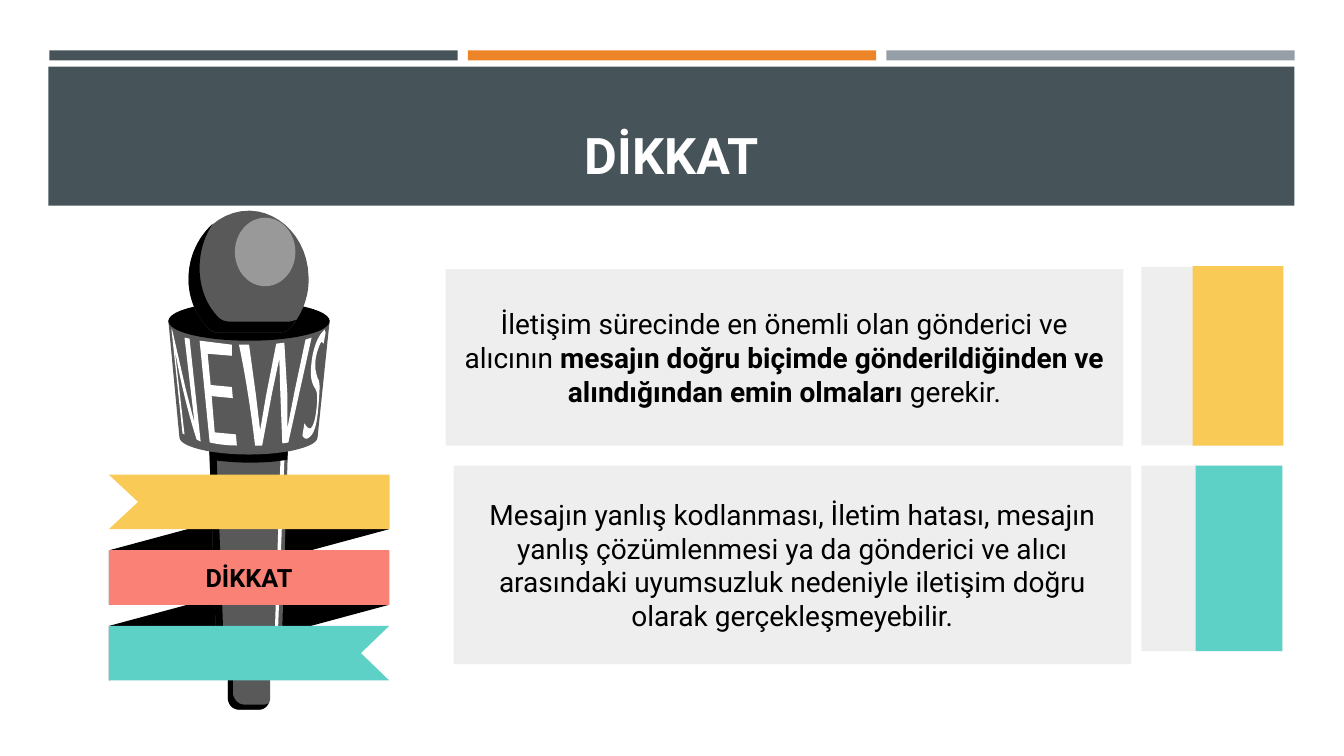
from typing import NamedTuple

from pptx import Presentation
from pptx.dml.color import RGBColor
from pptx.enum.shapes import MSO_SHAPE
from pptx.enum.text import MSO_ANCHOR, MSO_AUTO_SIZE, PP_ALIGN
from pptx.util import Inches, Pt

SLATE = RGBColor(0x46, 0x53, 0x59)
ORANGE = RGBColor(0xED, 0x84, 0x28)
SILVER = RGBColor(0x96, 0x9F, 0xA7)
PALE = RGBColor(0xEE, 0xEE, 0xEE)
YELLOW = RGBColor(0xF9, 0xCA, 0x55)
CORAL = RGBColor(0xFA, 0x81, 0x75)
TEAL = RGBColor(0x5E, 0xD1, 0xC6)
BLACK = RGBColor(0x00, 0x00, 0x00)
WHITE = RGBColor(0xFF, 0xFF, 0xFF)
GREY = RGBColor(0x59, 0x59, 0x59)
SHINE = RGBColor(0x99, 0x99, 0x99)
FONT = "Roboto"
CURVE_STEPS = 12


class Block(NamedTuple):
    left: float
    top: float
    width: float
    height: float
    color: RGBColor


class Span(NamedTuple):
    text: str
    bold: bool = False


class Outline(NamedTuple):
    """Each step is a corner (x, y) or a cubic curve (two controls, then its end)."""
    color: RGBColor
    start: tuple
    steps: list


def paint(shape, color: RGBColor) -> None:
    shape.shadow.inherit = False
    shape.fill.solid()
    shape.fill.fore_color.rgb = color
    shape.line.fill.background()


def draw_block(shapes, block: Block, kind=MSO_SHAPE.RECTANGLE):
    shape = shapes.add_shape(kind, *(Inches(length) for length in block[:4]))
    paint(shape, block.color)
    return shape


def curve_points(start: tuple, curve: tuple) -> list:
    x1, y1, x2, y2, x3, y3 = curve
    points = []
    for step in range(1, CURVE_STEPS + 1):
        t = step / CURVE_STEPS
        weights = ((1 - t) ** 3, 3 * t * (1 - t) ** 2, 3 * t * t * (1 - t), t ** 3)
        points.append(tuple(sum(w * v for w, v in zip(weights, values))
                            for values in ((start[0], x1, x2, x3), (start[1], y1, y2, y3))))
    return points


def draw_outline(shapes, outline: Outline):
    points = [outline.start]
    for step in outline.steps:
        points += [step] if len(step) == 2 else curve_points(points[-1], step)
    corners = [(Inches(x), Inches(y)) for x, y in points]
    builder = shapes.build_freeform(*corners[0])
    builder.add_line_segments(corners[1:], close=True)
    shape = builder.convert_to_shape()
    paint(shape, outline.color)
    return shape


def write(shape, spans: list[Span], size: int, color: RGBColor, anchor, side: float = 0.1, edge: float = 0.1) -> None:
    frame = shape.text_frame
    frame.word_wrap = True
    frame.auto_size = MSO_AUTO_SIZE.NONE
    frame.vertical_anchor = anchor
    frame.margin_left = frame.margin_right = Inches(side)
    frame.margin_top = frame.margin_bottom = Inches(edge)
    para = frame.paragraphs[0]
    para.alignment = PP_ALIGN.CENTER
    for span in spans:
        run = para.add_run()
        run.text = span.text
        run.font.name = FONT
        run.font.size = Pt(size)
        run.font.bold = span.bold
        run.font.color.rgb = color


# Ribbon: three bands of equal height, joined by two dark folds
LEFT, RIGHT, BAND, PITCH = 1.08, 3.86, 0.54, 0.75
TOPS = [4.71 + PITCH * index for index in range(3)]
FOLDS = [Outline(BLACK, (RIGHT, top), [(LEFT, top + PITCH), (LEFT, top + PITCH + BAND), (RIGHT, top + BAND)])
         for top in TOPS[:2]]
YELLOW_BAND, CORAL_BAND, TEAL_BAND = (
    Outline(color, (LEFT, top), [*left_notch, (LEFT, top + BAND), (RIGHT, top + BAND), *right_notch, (RIGHT, top)])
    for color, top, left_notch, right_notch in (
        (YELLOW, TOPS[0], [(1.37, TOPS[0] + BAND / 2)], []),
        (CORAL, TOPS[1], [], []),
        (TEAL, TOPS[2], [], [(3.58, TOPS[2] + BAND / 2)])))

# Microphone, from the handle up
HANDLE = [
    Outline(GREY, (2.26, 4.83), [(2.26, 6.92), (2.26, 6.99, 2.31, 7.04, 2.37, 7.04), (2.57, 7.04),
                                 (2.63, 7.04, 2.68, 6.99, 2.68, 6.92), (2.68, 4.83)]),
    Outline(BLACK, (2.26, 4.83), [(2.26, 6.92), (2.26, 6.99, 2.31, 7.04, 2.37, 7.04), (2.57, 7.04),
                                  (2.61, 7.04, 2.64, 7.02, 2.66, 6.98), (2.65, 6.98, 2.64, 6.99, 2.62, 6.99),
                                  (2.42, 6.99), (2.36, 6.99, 2.31, 6.93, 2.31, 6.87), (2.31, 4.83)]),
    Outline(GREY, (2.07, 4.31), [(2.15, 6.53), (2.15, 6.56, 2.29, 6.59, 2.47, 6.59),
                                 (2.65, 6.59, 2.79, 6.56, 2.79, 6.53), (2.86, 4.31)]),
    Outline(WHITE, (2.79, 4.31), [(2.72, 6.45), (2.75, 6.45), (2.83, 4.31)]),
    Outline(BLACK, (2.07, 4.31), [(2.08, 4.56), (2.15, 6.53), (2.15, 6.56, 2.29, 6.59, 2.47, 6.59),
                                  (2.64, 6.59, 2.79, 6.56, 2.79, 6.53), (2.79, 6.48),
                                  (2.73, 6.49, 2.64, 6.5, 2.54, 6.5), (2.36, 6.5, 2.22, 6.48, 2.22, 6.44),
                                  (2.15, 4.57), (2.25, 4.58, 2.35, 4.59, 2.47, 4.59),
                                  (2.63, 4.59, 2.75, 4.58, 2.85, 4.56), (2.86, 4.31)]),
]
COLLAR = Outline(GREY, (1.67, 3.18), [(1.78, 4.34), (1.78, 4.43, 2.09, 4.51, 2.47, 4.51),
                                      (2.85, 4.51, 3.15, 4.43, 3.15, 4.34), (3.27, 3.18)])
LETTERS = [
    Outline(WHITE, (1.7, 3.26), [(1.81, 4.3), (1.83, 4.31), (1.73, 3.44),
                                 (1.77, 3.69, 1.85, 4.05, 1.95, 4.36), (1.99, 4.38), (1.88, 3.36), (1.83, 3.35),
                                 (1.93, 4.2), (1.84, 3.85), (1.71, 3.28)]),
    Outline(WHITE, (1.98, 3.38), [(2.08, 4.39), (2.17, 4.41, 2.26, 4.42, 2.35, 4.42), (2.34, 4.31), (2.13, 4.29),
                                  (2.1, 3.93), (2.31, 3.95), (2.3, 3.84), (2.09, 3.82), (2.06, 3.51),
                                  (2.3, 3.53), (2.3, 3.42)]),
    Outline(WHITE, (3.09, 3.35), [(3.03, 3.37), (2.92, 3.89), (2.85, 4.25), (2.85, 3.91), (2.82, 3.4), (2.74, 3.41),
                                  (2.64, 3.92), (2.58, 4.27), (2.54, 3.93), (2.47, 3.42), (2.37, 3.42),
                                  (2.44, 3.75, 2.49, 4.09, 2.53, 4.42), (2.6, 4.42), (2.7, 3.89), (2.77, 3.56),
                                  (2.78, 3.89), (2.8, 4.4), (2.86, 4.39)]),
    Outline(WHITE, (3.22, 3.27), [(3.21, 3.28), (3.14, 3.35, 3.1, 3.49, 3.09, 3.6), (3.07, 3.75, 3.1, 3.82, 3.13, 3.86),
                                  (3.15, 3.9, 3.15, 3.95, 3.14, 4.05), (3.13, 4.15, 3.11, 4.23, 3.08, 4.25),
                                  (3.05, 4.25, 3.04, 4.23, 3.02, 4.2), (3, 4.32),
                                  (3.01, 4.34, 3.03, 4.36, 3.05, 4.35), (3.14, 4.31, 3.15, 4.12, 3.16, 4.02),
                                  (3.17, 3.87, 3.18, 3.79, 3.15, 3.75), (3.14, 3.71, 3.12, 3.67, 3.13, 3.57),
                                  (3.14, 3.5, 3.17, 3.41, 3.19, 3.39), (3.21, 3.41), (3.23, 3.3)]),
]
COLLAR_RIM = Block(1.67, 2.99, 1.6, 0.39, BLACK)
HEAD = [
    Outline(GREY, (2.47, 2.09), [(2.14, 2.09, 1.87, 2.39, 1.87, 2.77), (1.87, 2.95, 1.94, 3.12, 2.05, 3.24),
                                 (2.08, 3.28, 2.12, 3.3, 2.17, 3.3), (2.76, 3.3), (2.81, 3.3, 2.86, 3.28, 2.89, 3.24),
                                 (3, 3.11, 3.07, 2.93, 3.06, 2.74), (3.05, 2.38, 2.79, 2.1, 2.48, 2.09)]),
    Outline(BLACK, (2.11, 2.22), [(1.97, 2.35, 1.87, 2.54, 1.87, 2.77), (1.87, 2.95, 1.94, 3.12, 2.05, 3.24),
                                  (2.08, 3.28, 2.13, 3.3, 2.17, 3.3), (2.76, 3.3),
                                  (2.81, 3.3, 2.86, 3.28, 2.89, 3.24), (2.94, 3.17),
                                  (2.92, 3.18, 2.89, 3.19, 2.87, 3.19), (2.27, 3.19),
                                  (2.23, 3.19, 2.18, 3.17, 2.15, 3.13), (2.04, 3.01, 1.98, 2.84, 1.98, 2.66),
                                  (1.98, 2.49, 2.03, 2.34, 2.11, 2.22)]),
]
HEAD_SHINE = Block(2.33, 2.16, 0.6, 0.68, SHINE)

# Messages, each with a pale box and a coloured tab at the right
MESSAGES = [
    (Block(4.42, 2.67, 6.72, 1.75, PALE),
     [Span("İletişim sürecinde en önemli olan gönderici ve alıcının "),
      Span("mesajın doğru biçimde gönderildiğinden ve alındığından emin olmaları ", True), Span("gerekir.")]),
    (Block(4.5, 4.62, 6.72, 1.97, PALE),
     [Span("Mesajın yanlış kodlanması, İletim hatası, mesajın yanlış çözümlenmesi ya da gönderici ve alıcı "
           "arasındaki uyumsuzluk nedeniyle iletişim doğru olarak gerçekleşmeyebilir.")]),
]
TABS = [Block(11.32, 2.65, 1.4, 1.77, PALE), Block(11.83, 2.64, 0.9, 1.78, YELLOW),
        Block(11.32, 4.62, 1.4, 1.84, PALE), Block(11.86, 4.62, 0.86, 1.84, TEAL)]


def main() -> None:
    deck = Presentation()
    deck.slide_width, deck.slide_height = Inches(13.33), Inches(7.5)
    page = deck.slides.add_slide(deck.slide_layouts[5])
    shapes = page.shapes

    # Header and title
    for index, color in enumerate((SLATE, ORANGE, SILVER)):
        draw_block(shapes, Block(0.49 + 4.15 * index, 0.5, 4.05, 0.1, color))
    header = draw_block(shapes, Block(0.48, 0.66, 12.36, 1.38, SLATE))
    title = shapes.title
    title.left, title.top, title.width, title.height = Inches(0.63), Inches(0.8), Inches(12.06), Inches(1.08)
    write(title, [Span("DİKKAT", True)], 36, WHITE, MSO_ANCHOR.BOTTOM, edge=0.05)
    header.element.addnext(title.element)

    # Microphone wrapped in the ribbon
    drawing = shapes.add_group_shape().shapes
    for outline in [*FOLDS, *HANDLE, COLLAR, *LETTERS]:
        draw_outline(drawing, outline)
    draw_block(drawing, COLLAR_RIM, MSO_SHAPE.OVAL)
    for outline in HEAD:
        draw_outline(drawing, outline)
    draw_block(drawing, HEAD_SHINE, MSO_SHAPE.OVAL)
    draw_outline(drawing, YELLOW_BAND)
    write(draw_outline(drawing, CORAL_BAND), [Span("DİKKAT", True)], 18, BLACK, MSO_ANCHOR.MIDDLE)
    draw_outline(drawing, TEAL_BAND)

    # Messages and tabs
    for block, spans in MESSAGES:
        write(draw_block(shapes, block), spans, 20, BLACK, MSO_ANCHOR.MIDDLE, side=0.15)
    for tab in TABS:
        draw_block(shapes, tab)
    deck.save("out.pptx")


if __name__ == "__main__":
    main()
